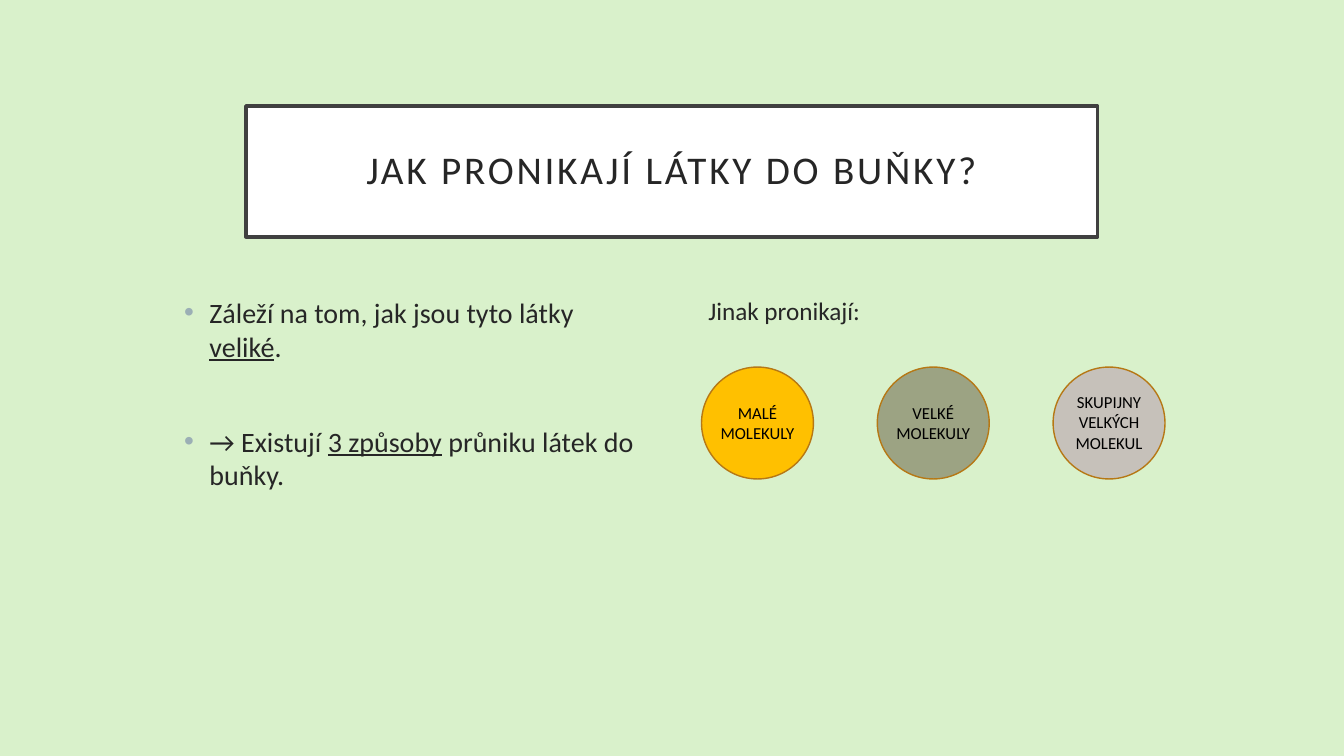
import pptx
import pptx.dml.color
import pptx.enum.shapes
import pptx.enum.text
import pptx.oxml
import pptx.oxml.ns
import pptx.util
import lxml.etree

Cm = pptx.util.Cm
Pt = pptx.util.Pt
ALIGN = pptx.enum.text.PP_ALIGN
ANCHOR = pptx.enum.text.MSO_ANCHOR
SHAPE = pptx.enum.shapes.MSO_SHAPE

COLORS = {
    "background": "D9F1CB",
    "title_fill": "FFFFFF",
    "title_line": "404040",
    "text": "262626",
    "label": "000000",
    "bullet": "9BAFB5",
    "circle_line": "B67815",
    "small": "FFC000",
    "large": "9CA383",
    "groups": "C6C1BA",
}


class CellSlide:
    """Hold the style and the current slide, and draw each kind of element."""

    font_name = "Calibri"

    def __init__(self, slide):
        self.slide = slide
        fill = slide.background.fill
        fill.solid()
        fill.fore_color.rgb = self.color("background")

    def color(self, name):
        return pptx.dml.color.RGBColor.from_string(COLORS[name])

    def style(self, paragraph, size, color="text"):
        for run in paragraph.runs:
            run.font.name = self.font_name
            run.font.size = Pt(size)
            run.font.color.rgb = self.color(color)

    def shape(self, kind, box, fill, line, width):
        shape = self.slide.shapes.add_shape(kind, *map(Cm, box))
        shape.shadow.inherit = False
        shape.fill.solid()
        shape.fill.fore_color.rgb = self.color(fill)
        shape.line.color.rgb = self.color(line)
        shape.line.width = Pt(width)
        return shape

    def text(self, box, text, size, color="text", align=ALIGN.LEFT):
        frame = self.slide.shapes.add_textbox(*map(Cm, box)).text_frame
        frame.word_wrap = True
        frame.text = text
        for paragraph in frame.paragraphs:
            paragraph.alignment = align
            self.style(paragraph, size, color)
        return frame

    def title(self, box, text):
        banner = self.shape(SHAPE.RECTANGLE, box, "title_fill", "title_line", 2.5)
        frame = banner.text_frame
        frame.word_wrap = True
        frame.vertical_anchor = ANCHOR.MIDDLE
        frame.margin_left = frame.margin_right = Cm(0.5)
        frame.margin_top = frame.margin_bottom = Cm(0.5)
        frame.text = text
        heading = frame.paragraphs[0]
        heading.alignment = ALIGN.CENTER
        heading.line_spacing = 0.9
        self.style(heading, 28)
        heading.runs[0].font._element.set("spc", "200")

    def bullets(self, box, points, size, gap):
        frame = self.text(box, "", size)
        for index, parts in enumerate(points):
            point = frame.add_paragraph() if index else frame.paragraphs[0]
            self.add_bullet(point)
            if index:
                point.space_before = Pt(gap)
            for words, underlined in parts:
                run = point.add_run()
                run.text = words
                run.font.underline = underlined
            self.style(point, size)

    def add_bullet(self, paragraph):
        qn = pptx.oxml.ns.qn
        properties = paragraph._p.get_or_add_pPr()
        indent = Cm(0.64)
        properties.set("marL", str(indent))
        properties.set("indent", str(-indent))
        bullet_color = lxml.etree.SubElement(properties, qn("a:buClr"))
        lxml.etree.SubElement(bullet_color, qn("a:srgbClr"), val=COLORS["bullet"])
        lxml.etree.SubElement(properties, qn("a:buFont"), typeface="Arial")
        lxml.etree.SubElement(properties, qn("a:buChar"), char="•")

    def molecule(self, left, top, diameter, fill, label, line_count):
        circle = (left, top, diameter, diameter)
        self.shape(SHAPE.OVAL, circle, fill, "circle_line", 1)
        width = 2.87
        height = 0.25 + 0.52 * line_count
        label_left = left + (diameter - width) / 2
        label_top = top + (diameter - height) / 2
        self.text((label_left, label_top, width, height), label, 12, "label", ALIGN.CENTER)


def main():
    deck = pptx.Presentation()
    deck.slide_width = Cm(33.87)
    deck.slide_height = Cm(19.05)
    page = CellSlide(deck.slides.add_slide(deck.slide_layouts[6]))

    page.title((6.2, 2.67, 21.46, 3.3), "JAK PRONIKAJÍ LÁTKY DO BUŇKY?")

    column_top, column_width, column_height = 7.32, 11.86, 8.61
    points = [
        [("Záleží na tom, jak jsou tyto látky ", False), ("veliké", True), (".", False)],
        [("→ Existují ", False), ("3 způsoby", True), (" průniku látek do buňky.", False)],
    ]
    page.bullets((4.39, column_top, column_width, column_height), points, 20, 44)
    page.text((17.6, column_top, column_width, column_height), "Jinak pronikají:", 18)

    molecules = [
        ("small", "MALÉ\nMOLEKULY", 2),
        ("large", "VELKÉ\nMOLEKULY", 2),
        ("groups", "SKUPIJNY VELKÝCH MOLEKUL", 3),
    ]
    for index, (fill, label, line_count) in enumerate(molecules):
        page.molecule(17.68 + 4.43 * index, 9.25, 2.82, fill, label, line_count)

    deck.save("out.pptx")


if __name__ == "__main__":
    main()
